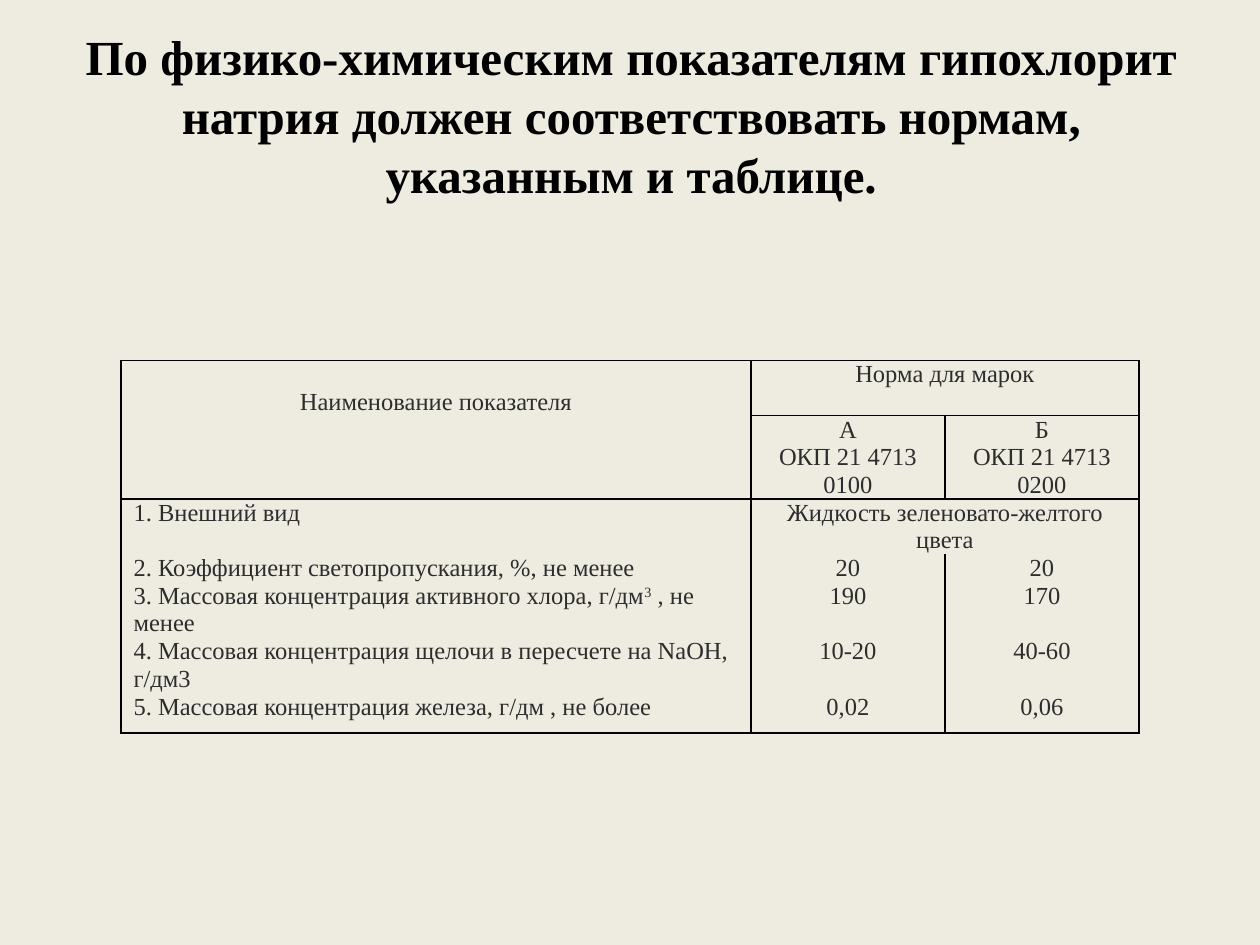
from dataclasses import dataclass

from lxml import etree
from pptx import Presentation
from pptx.dml.color import RGBColor
from pptx.enum.text import MSO_ANCHOR, PP_ALIGN
from pptx.oxml.ns import qn
from pptx.util import Inches, Pt

CENTER, LEFT = PP_ALIGN.CENTER, PP_ALIGN.LEFT
MIDDLE, TOP = MSO_ANCHOR.MIDDLE, MSO_ANCHOR.TOP


@dataclass(frozen=True)
class Theme:
    background: str = "EEECE1"
    title_color: str = "000000"
    text_color: str = "2D2D2D"
    line_color: str = "000000"
    font: str = "Times New Roman"
    title_size: float = 28
    text_size: float = 14
    spacer_size: float = 4
    line_spacing: float = 15.8
    line_width: float = 1


THEME = Theme()
WIDTH, HEIGHT = 10, 7.5
COLUMNS = (5, 1.54, 1.54)
LINE = 0.22  # height of one text line in the table
ROWS = (0.19, 2 * LINE, 3 * LINE, 2 * LINE, LINE, 2 * LINE, 2 * LINE, 0.32)

TITLE = ("По физико-химическим показателям гипохлорит натрия "
         "должен соответствовать нормам, указанным и таблице.\v")
# Text between bars is superscript; None continues the cell to its left
CELLS = (
    ("", "", ""),
    ("Наименование показателя", "Норма для марок", None),
    ("", "А\vОКП 21 4713 0100", "Б\vОКП 21 4713 0200"),
    ("1. Внешний вид", "Жидкость зеленовато-желтого цвета", None),
    ("2. Коэффициент светопропускания, %, не менее", "20", "20"),
    ("3. Массовая концентрация активного хлора, г/дм|3| , не менее", "190", "170"),
    ("4. Массовая концентрация щелочи в пересчете на NaOH, г/дм3", "10-20", "40-60"),
    ("5. Массовая концентрация железа, г/дм , не более", "0,02", "0,06"),
)
HEADER_ROWS = 3


def style_font(font, size, color, bold=False):
    font.name, font.size, font.bold = THEME.font, Pt(size), bold
    font.color.rgb = RGBColor.from_string(color)


def add_title(slide):
    shape = slide.shapes.add_textbox(Inches(0.51), Inches(0.52), Inches(9), Inches(1.25))
    frame = shape.text_frame
    frame.word_wrap = True
    frame.vertical_anchor = MIDDLE
    frame.text = TITLE
    paragraph = frame.paragraphs[0]
    paragraph.alignment = CENTER
    style_font(paragraph.font, THEME.title_size, THEME.title_color, True)
    for run in paragraph.runs:
        style_font(run.font, THEME.title_size, THEME.title_color, True)


def has_line_below(row, column):
    return row in (0, HEADER_ROWS - 1, len(ROWS) - 1) or (row == 1 and column > 0)


def set_borders(cell, row, column):
    """Rule the cell; the spacer row on top has only its bottom line."""
    sides = {
        "a:lnL": row > 0,
        "a:lnR": row > 0,
        "a:lnT": row > 0 and has_line_below(row - 1, column),
        "a:lnB": has_line_below(row, column),
    }
    properties = cell._tc.get_or_add_tcPr()
    for position, (tag, visible) in enumerate(sides.items()):
        line = etree.Element(qn(tag), w=str(Pt(THEME.line_width)))
        if visible:
            fill = etree.SubElement(line, qn("a:solidFill"))
            etree.SubElement(fill, qn("a:srgbClr"), val=THEME.line_color)
        else:
            etree.SubElement(line, qn("a:noFill"))
        properties.insert(position, line)


def fill_cell(cell, text, alignment, size):
    cell.margin_left = cell.margin_right = Inches(0.1)
    cell.margin_top = cell.margin_bottom = 0
    cell.vertical_anchor = TOP
    paragraph = cell.text_frame.paragraphs[0]
    paragraph.alignment = alignment
    style_font(paragraph.font, size, THEME.text_color)
    if not text:
        # An empty cell takes its height from the end mark of the paragraph
        etree.SubElement(paragraph._p, qn("a:endParaRPr"), sz=str(int(size * 100)))
        return
    paragraph.line_spacing = Pt(THEME.line_spacing)
    first, *others = text.split("|")
    paragraph.text = first
    for part in others:
        paragraph.add_run().text = part
    for run in paragraph.runs:
        style_font(run.font, size, THEME.text_color)
    if others:
        paragraph.runs[1].font._element.set("baseline", "30000")


def add_norms_table(slide):
    frame = slide.shapes.add_table(len(ROWS), len(COLUMNS), Inches(0.96), Inches(2.67),
                                   Inches(sum(COLUMNS)), Inches(sum(ROWS)))
    table = frame.table
    table.first_row = table.horz_banding = False
    for column, width in zip(table.columns, COLUMNS):
        column.width = Inches(width)
    for row, height in zip(table.rows, ROWS):
        row.height = Inches(height)

    for row, texts in enumerate(CELLS):
        for column, text in enumerate(texts):
            cell = table.cell(row, column)
            cell.fill.background()
            set_borders(cell, row, column)
            if text is None:
                table.cell(row, column - 1).merge(cell)
                continue
            alignment = CENTER if column or row < HEADER_ROWS else LEFT
            size = THEME.text_size if row else THEME.spacer_size
            fill_cell(cell, text, alignment, size)
    # The first heading stands one line lower
    table.cell(1, 0).margin_top = Inches(LINE)


def main():
    presentation = Presentation()
    presentation.slide_width, presentation.slide_height = Inches(WIDTH), Inches(HEIGHT)
    slide = presentation.slides.add_slide(presentation.slide_layouts[6])
    background = slide.background.fill
    background.solid()
    background.fore_color.rgb = RGBColor.from_string(THEME.background)
    add_title(slide)
    add_norms_table(slide)
    presentation.save("out.pptx")


if __name__ == "__main__":
    main()
